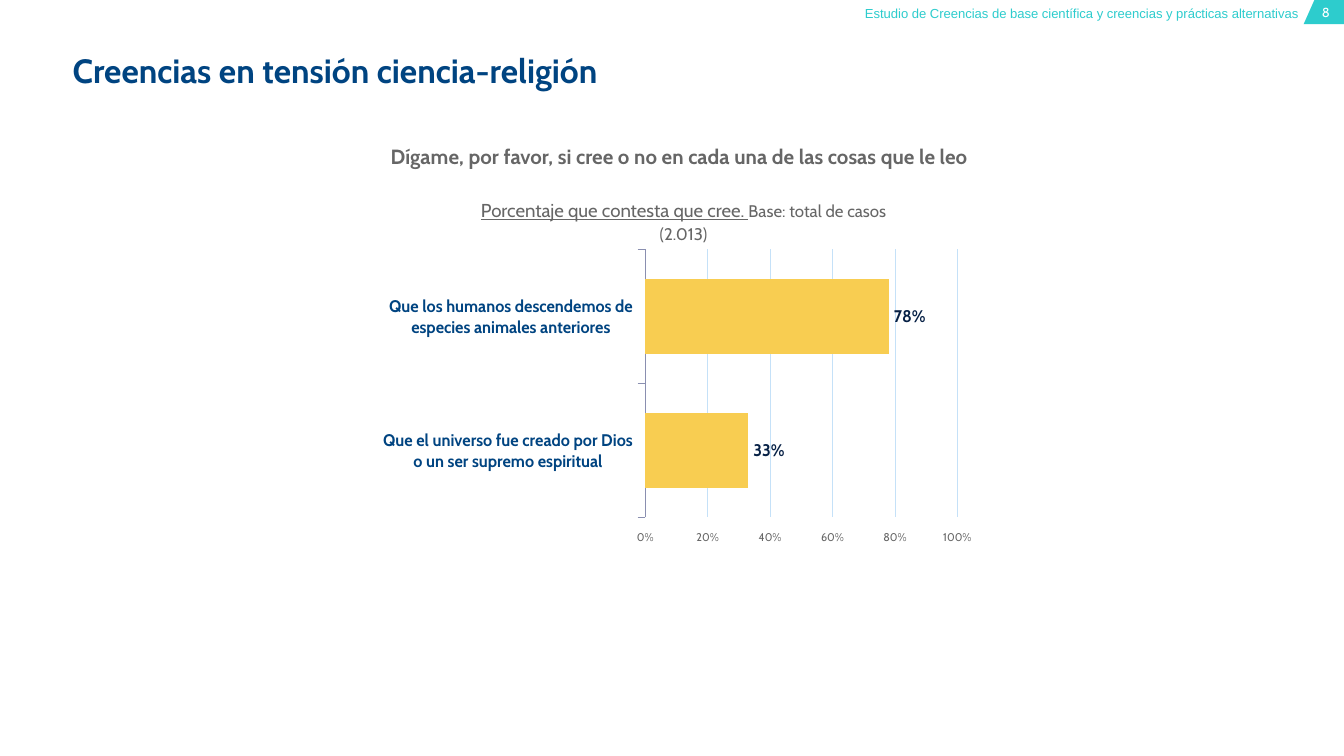
import pptx
import pptx.chart.data
import pptx.dml.color
import pptx.enum.chart
import pptx.enum.text
import pptx.util

INK = {
    "navy": "004481", "dark": "072146", "grey": "666666", "teal": "2DCCCD",
    "gold": "F8CD51", "grid": "C5E1F8", "axis": "8A8FB0", "white": "FFFFFF",
}
ALIGN = pptx.enum.text.PP_ALIGN
inch = pptx.util.Inches
WIDE = 10
HIGH = WIDE * 9 / 16


def tint(name):
    return pptx.dml.color.RGBColor.from_string(INK[name])


def style(font, size, ink, **marks):
    marks = {"name": "Cabin", "bold": False, "size": pptx.util.Pt(size), **marks}
    for key, value in marks.items():
        setattr(font, key, value)
    font.color.rgb = tint(ink)


def place(shape, *box):
    for key, value in zip(("left", "top", "width", "height"), box):
        setattr(shape, key, inch(value))


def write(shape, runs, align, inset=(0, 0)):
    """Fill a shape with one paragraph of (text, size, ink, marks) runs."""
    frame = shape.text_frame
    side, edge = map(inch, inset)
    look = {
        "word_wrap": True, "auto_size": pptx.enum.text.MSO_AUTO_SIZE.NONE,
        "vertical_anchor": pptx.enum.text.MSO_ANCHOR.TOP,
        "margin_left": side, "margin_right": side,
        "margin_top": edge, "margin_bottom": edge,
    }
    for key, value in look.items():
        setattr(frame, key, value)
    para = frame.paragraphs[0]
    para.alignment = align
    for text, size, ink, marks in runs:
        run = para.add_run()
        run.text = text
        style(run.font, size, ink, **marks)
    return para


def label(slide, box, runs, align, inset=(0, 0)):
    shape = slide.shapes.add_textbox(*map(inch, box))
    return write(shape, runs, align, inset)


def corner(slide):
    """Draw the slanted tab behind the page number."""
    pen = slide.shapes.build_freeform(inch(9.78), 0, scale=1)
    points = [(WIDE, 0), (WIDE, 0.18), (9.7, 0.18)]
    pen.add_line_segments([(inch(x), inch(y)) for x, y in points])
    tab = pen.convert_to_shape()
    tab.shadow.inherit = False
    tab.fill.solid()
    tab.fill.fore_color.rgb = tint("teal")
    tab.line.fill.background()


def inner(chart, **shares):
    """Fix the plot area as shares of the chart's size."""
    area = chart.plots[0]._element.getparent()
    for old in area.findall(pptx.oxml.ns.qn("c:layout")):
        area.remove(old)
    marks = {"layoutTarget": "inner", "xMode": "edge", "yMode": "edge", **shares}
    body = "".join(f'<c:{key} val="{value}"/>' for key, value in marks.items())
    area.insert(0, pptx.oxml.parse_xml(
        f'<c:layout {pptx.oxml.ns.nsdecls("c")}>'
        f"<c:manualLayout>{body}</c:manualLayout></c:layout>"))


def bars(slide, box, rows):
    kinds = pptx.enum.chart
    data = pptx.chart.data.CategoryChartData(number_format="0%")
    data.categories = [name for name, _ in rows]
    data.add_series("Series 1", [value for _, value in rows])
    chart = slide.shapes.add_chart(
        kinds.XL_CHART_TYPE.BAR_CLUSTERED, *map(inch, box), data).chart
    chart.has_legend = chart.has_title = False
    style(chart.font, 9, "dark", bold=True)
    inner(chart, x=0.45, y=0.03, w=0.55, h=0.7)

    plot = chart.plots[0]
    plot.gap_width, plot.vary_by_categories = 80, False
    fill = plot.series[0].format.fill
    fill.solid()
    fill.fore_color.rgb = tint("gold")

    tags = plot.series[0].data_labels
    look = {
        "show_value": True, "number_format": "0%",
        "number_format_is_linked": False,
        "position": kinds.XL_LABEL_POSITION.OUTSIDE_END,
    }
    for key, value in look.items():
        setattr(tags, key, value)
    style(tags.font, 9, "dark", bold=True)

    names, scale = chart.category_axis, chart.value_axis
    names.has_major_gridlines = False
    names.format.line.color.rgb = tint("axis")
    names.format.line.width = pptx.util.Pt(0.5)
    style(names.tick_labels.font, 9, "navy", bold=True)

    look = {"minimum_scale": 0, "maximum_scale": 1, "major_unit": 0.2,
            "has_major_gridlines": True}
    for key, value in look.items():
        setattr(scale, key, value)
    scale.format.line.fill.background()
    line = scale.major_gridlines.format.line
    line.color.rgb = tint("grid")
    line.width = pptx.util.Pt(0.25)
    scale.tick_labels.number_format = "0%"
    scale.tick_labels.number_format_is_linked = False
    style(scale.tick_labels.font, 6, "grey")


def main():
    deck = pptx.Presentation()
    deck.slide_width, deck.slide_height = inch(WIDE), inch(HIGH)
    slide = deck.slides.add_slide(deck.slide_layouts[5])

    corner(slide)
    label(slide, (9.75, 0.03, 0.23, 0.12), [("8", 7, "white", {})], ALIGN.CENTER)
    study = "Estudio de Creencias de base científica y creencias y prácticas alternativas"
    label(slide, (6.39, 0.04, 3.27, 0.12),
          [(study, 7, "teal", {"name": "Arial"})], ALIGN.RIGHT)

    title = slide.shapes.title
    place(title, 0.54, 0.37, 8.81, 0.37)
    write(title, [("Creencias en tensión ciencia-religión", 18, "navy",
                   {"bold": True})], ALIGN.LEFT)

    ask = "Dígame, por favor, si cree o no en cada una de las cosas que le leo"
    label(slide, (1, 1.07, 8.11, 0.24),
          [(ask, 11, "grey", {"bold": True})], ALIGN.CENTER)
    bars(slide, (2.85, 1.77, 4.38, 2.85), [
        ("Que el universo fue creado por Dios o un ser supremo espiritual", 0.33),
        ("Que los humanos descendemos de especies animales anteriores", 0.78),
    ])
    base = label(slide, (3.29, 1.41, 3.59, 0.28), [
        ("Porcentaje que contesta que cree. ", 10, "grey", {"underline": True}),
        ("Base: total de casos (2.013)", 9, "grey", {}),
    ], ALIGN.CENTER, (0.1, 0.05))
    base.line_spacing = 1.11

    deck.save("out.pptx")


if __name__ == "__main__":
    main()
